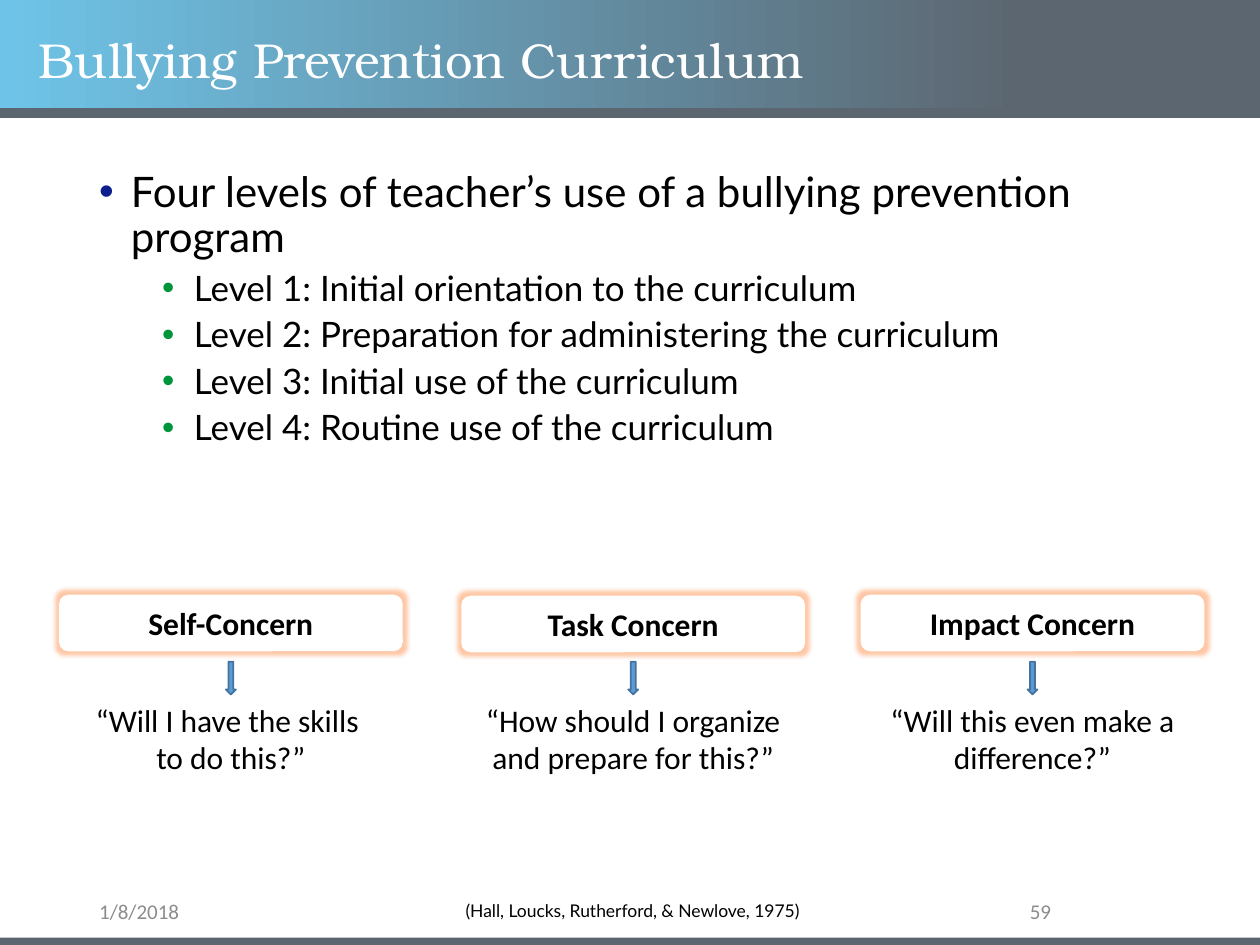
import pptx
import pptx.dml.color
import pptx.enum.shapes
import pptx.enum.text
import pptx.util
from lxml import etree
from pptx.oxml.ns import qn

Cm = pptx.util.Cm
Pt = pptx.util.Pt
SHAPES = pptx.enum.shapes.MSO_SHAPE
ALIGN = pptx.enum.text.PP_ALIGN
ANCHOR = pptx.enum.text.MSO_ANCHOR

# Content
TITLE = "Bullying Prevention Curriculum"
BULLETS = [
    (0, "Four levels of teacher’s use of a bullying prevention program"),
    (1, "Level 1: Initial orientation to the curriculum"),
    (1, "Level 2: Preparation for administering the curriculum"),
    (1, "Level 3: Initial use of the curriculum"),
    (1, "Level 4: Routine use of the curriculum"),
]
CONCERNS = [  # left, top of the label, label, question
    (1.19, 11.99, "Self-Concern", "“Will I have the skills \vto do this?”"),
    (9.3, 12.01, "Task Concern", "“How should I organize and prepare for this?”"),
    (17.35, 11.99, "Impact Concern", "“Will this even make a difference?”"),
]
DATE, CITATION, NUMBER = "1/8/2018", "(Hall, Loucks, Rutherford, & Newlove, 1975)", "59"

# Formats
SLATE, SKY = "5C6670", "6EC4E8"
TITLE_FONT = {"name": "TeX Gyre Bonum", "size": Pt(28), "color": "FFFFFF"}
FOOTER_FONT = {"name": "Calibri", "size": Pt(12), "color": "8C8C8C"}
CITATION_FONT = {"name": "Lato", "size": Pt(10), "color": "000000"}
QUESTION_FONT = {"name": "Calibri", "size": Pt(18), "color": "000000"}
LABEL_FONT = {**QUESTION_FONT, "bold": True}
LEVELS = [
    {"size": 24, "indent": 0.64, "space": 0, "bullet": "0D1E8E"},
    {"size": 20, "indent": 1.91, "space": 5, "bullet": "00953A"},
]
HANGING = 0.64
COLUMN_WIDTH = 6.93
ARROW_WIDTH = 0.2


def rgb(value):
    return pptx.dml.color.RGBColor.from_string(value)


def set_font(paragraph, formats):
    for name, value in formats.items():
        if name == "color":
            paragraph.font.color.rgb = rgb(value)
        else:
            setattr(paragraph.font, name, value)


def write(shape, text, formats, align=ALIGN.LEFT, anchor=ANCHOR.TOP):
    frame = shape.text_frame
    frame.word_wrap = True
    frame.vertical_anchor = anchor
    paragraph = frame.paragraphs[0]
    paragraph.text = text
    paragraph.alignment = align
    set_font(paragraph, formats)
    return paragraph


def add_text(slide, box, *text_format):
    return write(slide.shapes.add_textbox(*map(Cm, box)), *text_format)


def add_shape(slide, kind, box, fill, line=None):
    shape = slide.shapes.add_shape(kind, *map(Cm, box))
    shape.shadow.inherit = False
    shape.fill.solid()
    shape.fill.fore_color.rgb = rgb(fill)
    if line:
        shape.line.color.rgb = rgb(line)
        shape.line.width = Pt(1)
    else:
        shape.line.fill.background()
    return shape


def add_glow(shape, color):
    effects = shape.element.spPr.find(qn("a:effectLst"))
    glow = etree.SubElement(effects, qn("a:glow"), rad=str(Pt(5)))
    tint = etree.SubElement(glow, qn("a:srgbClr"), val=color)
    etree.SubElement(tint, qn("a:alpha"), val="40000")


def add_bullet(paragraph, level):
    properties = paragraph._p.get_or_add_pPr()
    properties.set("marL", str(Cm(level["indent"])))
    properties.set("indent", str(-Cm(HANGING)))
    color = etree.SubElement(properties, qn("a:buClr"))
    etree.SubElement(color, qn("a:srgbClr"), val=level["bullet"])
    etree.SubElement(properties, qn("a:buFont"), typeface="Arial")
    etree.SubElement(properties, qn("a:buChar"), char="•")


def add_header(slide):
    banner = add_shape(slide, SHAPES.RECTANGLE, (0, 0, 25.4, 2.21), SKY)
    banner.fill.gradient()
    banner.fill.gradient_angle = 0
    for stop, (position, color) in zip(banner.fill.gradient_stops, [(0, SKY), (0.81, SLATE)]):
        stop.position = position
        stop.color.rgb = rgb(color)
    for top in (2.18, 18.9):
        add_shape(slide, SHAPES.RECTANGLE, (0, top, 25.4, 0.2), SLATE)
    title = add_text(slide, (0.53, 0.53, 21.89, 1.45), TITLE, TITLE_FONT, ALIGN.LEFT, ANCHOR.MIDDLE)
    title.line_spacing = 0.9


def add_bullets(slide):
    frame = slide.shapes.add_textbox(Cm(1.75), Cm(3.33), Cm(21.89), Cm(14)).text_frame
    frame.word_wrap = True
    for index, (depth, text) in enumerate(BULLETS):
        level = LEVELS[depth]
        paragraph = frame.add_paragraph() if index else frame.paragraphs[0]
        paragraph.text = text
        paragraph.level = depth
        paragraph.line_spacing = 0.9
        paragraph.space_before = Pt(level["space"])
        add_bullet(paragraph, level)
        set_font(paragraph, {"name": "Lato", "size": Pt(level["size"]), "color": "000000"})


def add_concerns(slide):
    for left, top, label, question in CONCERNS:
        box = add_shape(slide, SHAPES.ROUNDED_RECTANGLE, (left, top, COLUMN_WIDTH, 1.14), "FFFFFF")
        add_glow(box, "FF7620")
        write(box, label, LABEL_FONT, ALIGN.CENTER, ANCHOR.MIDDLE)
        arrow_left = left + (COLUMN_WIDTH - ARROW_WIDTH) / 2
        add_shape(slide, SHAPES.DOWN_ARROW, (arrow_left, 13.34, ARROW_WIDTH, 0.66), "5B9BD5", "43739E")
        add_text(slide, (left, 14, COLUMN_WIDTH, 1.8), question, QUESTION_FONT, ALIGN.CENTER)


def add_footer(slide):
    add_text(slide, (1.75, 18.08, 5.72, 0.58), DATE, FOOTER_FONT, ALIGN.LEFT, ANCHOR.MIDDLE)
    add_text(slide, (17.93, 18.08, 3.51, 0.58), NUMBER, FOOTER_FONT, ALIGN.RIGHT, ANCHOR.MIDDLE)
    add_text(slide, (0.76, 18.01, 23.98, 0.69), CITATION, CITATION_FONT, ALIGN.CENTER)


def main():
    presentation = pptx.Presentation()
    presentation.slide_width, presentation.slide_height = Cm(25.4), Cm(19.05)
    slide = presentation.slides.add_slide(presentation.slide_layouts[6])
    for add_part in (add_header, add_bullets, add_concerns, add_footer):
        add_part(slide)
    presentation.save("out.pptx")


if __name__ == "__main__":
    main()
